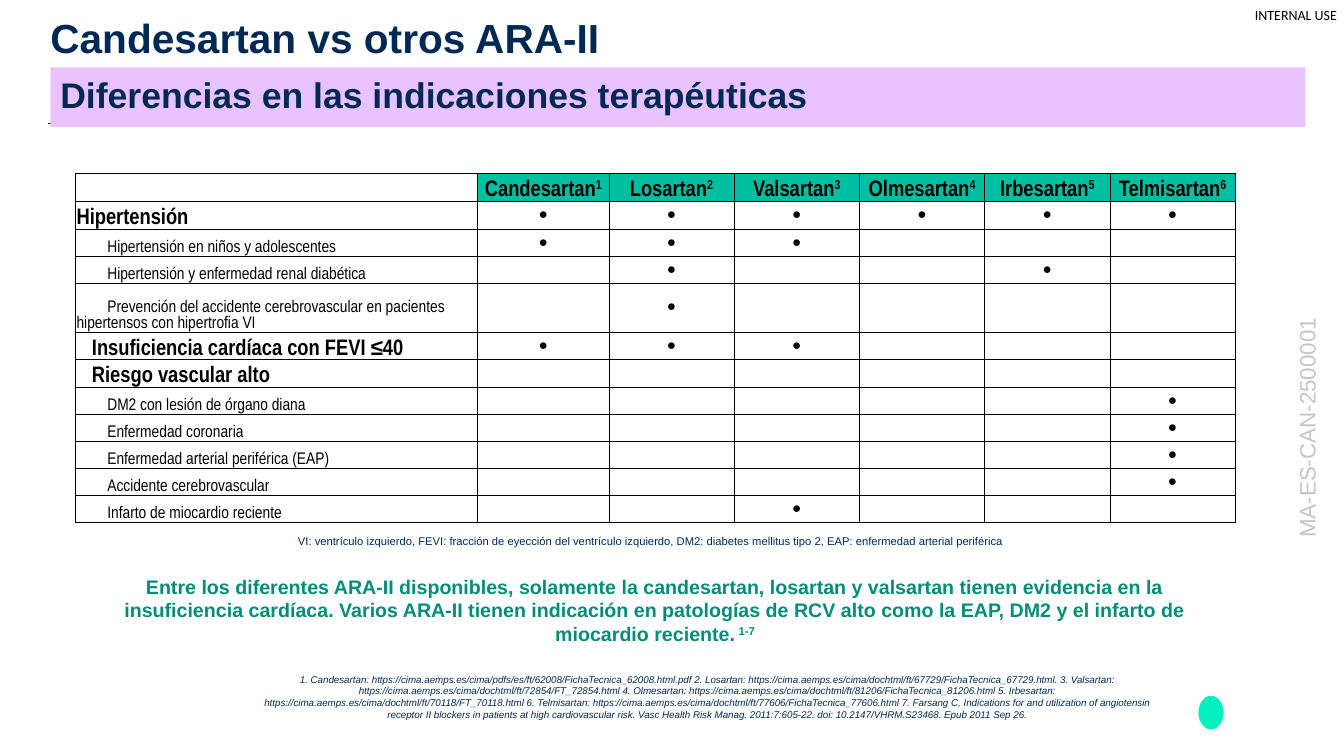
from dataclasses import dataclass
from lxml.etree import SubElement as Sub
from pptx import Presentation
from pptx.dml.color import RGBColor as Rgb
from pptx.enum.shapes import MSO_CONNECTOR as Link, MSO_SHAPE as Kind
from pptx.enum.text import MSO_ANCHOR as Anchor, PP_ALIGN as Align
from pptx.oxml.ns import qn
from pptx.util import Pt


@dataclass(frozen=True)
class Theme:
    navy: str = "002855"
    black: str = "000000"
    white: str = "FFFFFF"
    lilac: str = "E9C3FF"
    teal: str = "00BEA0"
    green: str = "008E78"
    mint: str = "00F0BE"
    gray: str = "C5C5C5"
    sans: str = "Arial"
    slim: str = "Arial Narrow"
    label: str = "Calibri"
    title: float = 29
    band: float = 25.4
    head: float = 16
    claim: float = 14
    body: float = 12
    dot: float = 11
    tag: float = 10
    note: float = 8
    source: float = 7


T = Theme()

DRUGS = ["Candesartan", "Losartan", "Valsartan", "Olmesartan", "Irbesartan", "Telmisartan"]
USES = [
    ("Hipertensión", 0, "123456"),
    ("Hipertensión en niños y adolescentes", 22, "123"),
    ("Hipertensión y enfermedad renal diabética", 22, "25"),
    ("Prevención del accidente cerebrovascular en pacientes hipertensos "
     "con hipertrofia VI", 22, "2"),
    ("Insuficiencia cardíaca con FEVI ≤40", 11, "123"),
    ("Riesgo vascular alto", 11, ""),
    ("DM2 con lesión de órgano diana", 22, "6"),
    ("Enfermedad coronaria", 22, "6"),
    ("Enfermedad arterial periférica (EAP)", 22, "6"),
    ("Accidente cerebrovascular", 22, "6"),
    ("Infarto de miocardio reciente", 22, "3"),
]
TALL = 4
CLAIM = (
    "Entre los diferentes ARA-II disponibles, solamente la candesartan, losartan y "
    "valsartan tienen evidencia en la insuficiencia cardíaca. Varios ARA-II tienen "
    "indicación en patologías de RCV alto como la EAP, DM2 y el infarto de miocardio reciente."
)
TERMS = (
    "VI: ventrículo izquierdo, FEVI: fracción de eyección del ventrículo izquierdo, "
    "DM2: diabetes mellitus tipo 2, EAP: enfermedad arterial periférica"
)
CIMA = "https://cima.aemps.es/cima/"
SOURCES = (
    f"1. Candesartan: {CIMA}pdfs/es/ft/62008/FichaTecnica_62008.html.pdf "
    f"2. Losartan: {CIMA}dochtml/ft/67729/FichaTecnica_67729.html. "
    f"3. Valsartan: {CIMA}dochtml/ft/72854/FT_72854.html "
    f"4. Olmesartan: {CIMA}dochtml/ft/81206/FichaTecnica_81206.html "
    f"5. Irbesartan: {CIMA}dochtml/ft/70118/FT_70118.html "
    f"6. Telmisartan: {CIMA}dochtml/ft/77606/FichaTecnica_77606.html "
    "7. Farsang C, Indications for and utilization of angiotensin receptor II blockers "
    "in patients at high cardiovascular risk. Vasc Health Risk Manag. 2011:7:605-22. "
    "doi: 10.2147/VHRM.S23468. Epub 2011 Sep 26."
)


def write(frame, words, size=T.body, color=T.navy, font=T.sans, bold=False, italic=False,
          align=Align.LEFT, sup="", indent=0, space=None):
    para = frame.paragraphs[0]
    para.alignment = align
    if space:
        para.line_spacing = space
    if indent:
        props = para._p.get_or_add_pPr()
        props.set("marL", "0")
        props.set("indent", str(Pt(indent)))
    for part, base in ((words, "0"), (sup, "30000")):
        if part:
            run = para.add_run()
            run.text = part
            face = run.font
            face.name, face.size = font, Pt(size)
            face.bold, face.italic = bold, italic
            face.color.rgb = Rgb.from_string(color)
            run._r.get_or_add_rPr().set("baseline", base)


def paint(item, color):
    item.fill.solid()
    item.fill.fore_color.rgb = Rgb.from_string(color)


def block(slide, area, color, kind=Kind.RECTANGLE):
    shape = slide.shapes.add_shape(kind, *map(Pt, area))
    shape.shadow.inherit = False
    shape.line.fill.background()
    paint(shape, color)
    return shape


def box(slide, area, words, fill=None, anchor=Anchor.TOP, inset=None, wrap=True, turn=0, **style):
    shape = block(slide, area, fill) if fill else slide.shapes.add_textbox(*map(Pt, area))
    shape.rotation = turn
    frame = shape.text_frame
    frame.word_wrap = wrap
    frame.vertical_anchor = anchor
    if inset is not None:
        frame.margin_left = frame.margin_right = Pt(inset)
        frame.margin_top = frame.margin_bottom = Pt(inset)
    write(frame, words, **style)


def rule(slide, left, right, top):
    line = slide.shapes.add_connector(Link.STRAIGHT, Pt(left), Pt(top), Pt(right), Pt(top))
    line.line.color.rgb = Rgb.from_string(T.navy)
    line.line.width = Pt(0.5)
    Sub(line._element.spPr, qn("a:effectLst"))


def frame_cell(cell):
    props = cell._tc.get_or_add_tcPr()
    for side in "LRTB":
        edge = Sub(props, qn(f"a:ln{side}"), w=str(Pt(0.5)))
        Sub(Sub(edge, qn("a:solidFill")), qn("a:srgbClr"), val=T.black)


def set_cell(cell, words="", fill=None, anchor=Anchor.MIDDLE, **style):
    cell.margin_left = cell.margin_right = cell.margin_top = Pt(0.7)
    cell.margin_bottom = 0
    cell.vertical_anchor = anchor
    frame_cell(cell)
    if fill:
        paint(cell, fill)
    else:
        cell.fill.background()
    if words:
        write(cell.text_frame, words, color=T.black, font=T.slim, **style)
    else:
        Sub(cell.text_frame.paragraphs[0]._p, qn("a:endParaRPr"), sz=str(T.dot * 100))


def grid(slide):
    wide = [287.3, 93.6] + [89.5] * 5
    high = [35 if row == TALL else 19.2 for row in range(len(USES) + 1)]
    area = map(Pt, (54, 123.9, sum(wide), sum(high)))
    table = slide.shapes.add_table(len(high), len(wide), *area).table
    table.first_row = table.horz_banding = False
    for col, width in zip(table.columns, wide):
        col.width = Pt(width)
    for row, height in zip(table.rows, high):
        row.height = Pt(height)
    set_cell(table.cell(0, 0))
    for col, drug in enumerate(DRUGS, 1):
        set_cell(table.cell(0, col), drug, fill=T.teal, anchor=Anchor.BOTTOM,
                 size=T.head, bold=True, align=Align.CENTER, sup=str(col))
    for row, (use, indent, marks) in enumerate(USES, 1):
        main_use = indent < 22
        set_cell(table.cell(row, 0), use, anchor=Anchor.BOTTOM, indent=indent,
                 size=T.head if main_use else T.body, bold=main_use)
        for col in range(1, len(wide)):
            set_cell(table.cell(row, col), "●" if str(col) in marks else "",
                     size=T.dot, align=Align.CENTER)


def main():
    deck = Presentation()
    deck.slide_width, deck.slide_height = Pt(960), Pt(540)
    slide = deck.slides.add_slide(deck.slide_layouts[6])
    block(slide, (856, 497, 18, 24), T.mint, Kind.OVAL)
    box(slide, (896.4, 5, 61.2, 12.2), "INTERNAL USE", inset=0, wrap=False,
        size=T.tag, color=T.black, font=T.label)
    rule(slide, 34.6, 931.7, 87.8)
    box(slide, (36, 2.2, 828, 49), "Candesartan vs otros ARA-II",
        anchor=Anchor.MIDDLE, inset=0, size=T.title, bold=True)
    box(slide, (36, 48.2, 896.4, 42.5), "Diferencias en las indicaciones terapéuticas",
        fill=T.lilac, anchor=Anchor.MIDDLE, size=T.band, bold=True, space=0.9)
    box(slide, (177.1, 477.4, 655.9, 55.4), SOURCES, fill=T.white,
        size=T.source, italic=True, align=Align.CENTER)
    grid(slide)
    box(slide, (61.2, 406.8, 813.6, 58.3), CLAIM, fill=T.white, size=T.claim,
        color=T.green, bold=True, align=Align.CENTER, sup=" 1-7")
    box(slide, (47.5, 378, 835.2, 17.3), TERMS, size=T.note, align=Align.CENTER)
    box(slide, (837.4, 292.3, 192.2, 26.6), "MA-ES-CAN-2500001", turn=270,
        size=T.head, color=T.gray, align=Align.CENTER)
    deck.save("out.pptx")


if __name__ == "__main__":
    main()
